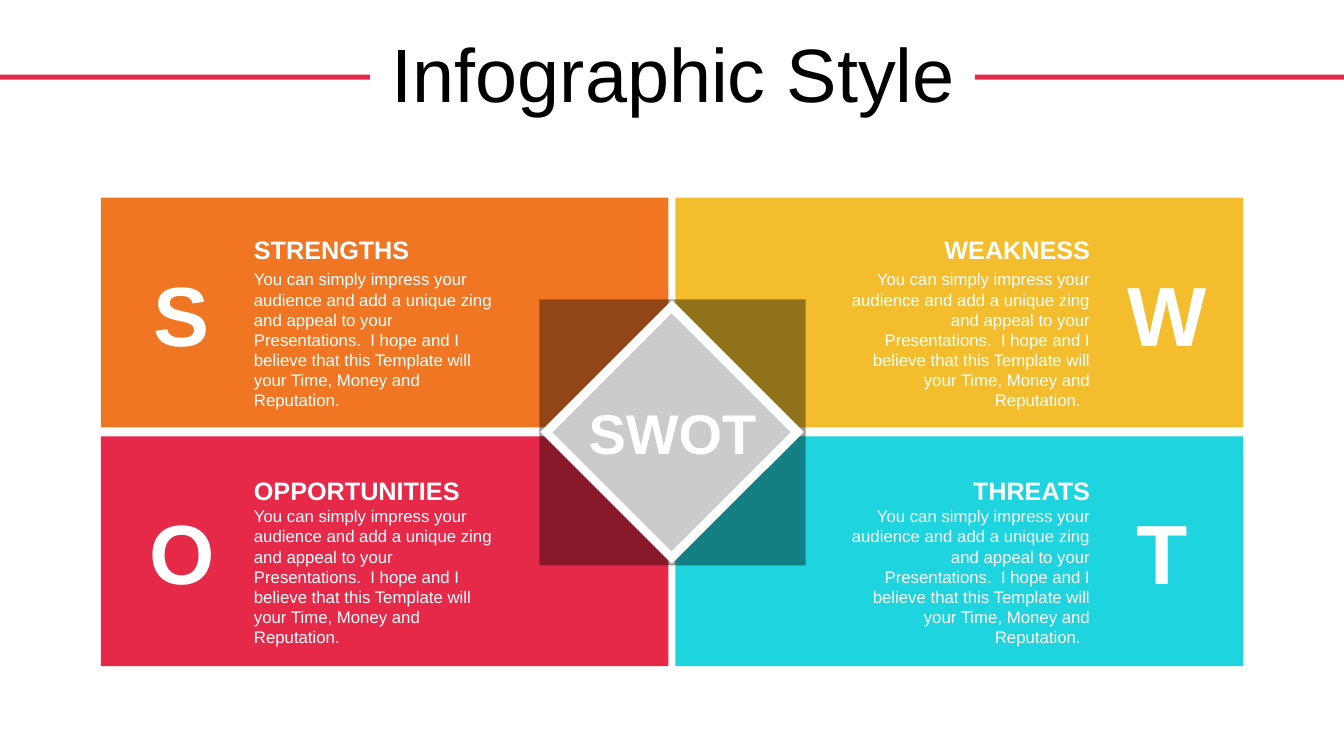
from pptx import Presentation
from pptx.dml.color import RGBColor
from pptx.enum.shapes import MSO_SHAPE
from pptx.enum.text import MSO_ANCHOR, PP_ALIGN
from pptx.oxml.ns import qn
from pptx.util import Inches, Pt
from lxml import etree

BLACK = RGBColor(0x00, 0x00, 0x00)
WHITE = RGBColor(0xFF, 0xFF, 0xFF)
GRAY = RGBColor(0xCB, 0xCB, 0xCB)
ORANGE = RGBColor(0xF0, 0x76, 0x24)
RED = RGBColor(0xE6, 0x29, 0x49)
YELLOW = RGBColor(0xF4, 0xBD, 0x2D)
CYAN = RGBColor(0x1E, 0xD4, 0xDE)

BODY = ("You can simply impress your audience and add a unique zing and appeal "
        "to your Presentations.  I hope and I believe that this Template will "
        "your Time, Money and Reputation.")

prs = Presentation()
prs.slide_width, prs.slide_height = Inches(13.33), Inches(7.5)
slide = prs.slides.add_slide(prs.slide_layouts[5])


def add_block(kind, left, top, width, height, color):
    block = slide.shapes.add_shape(
        kind, Inches(left), Inches(top), Inches(width), Inches(height))
    block.shadow.inherit = False
    block.fill.solid()
    block.fill.fore_color.rgb = color
    block.line.fill.background()
    return block


def add_label(text, left, top, width, height, size, align, bold=True):
    label = slide.shapes.add_textbox(
        Inches(left), Inches(top), Inches(width), Inches(height))
    label.text_frame.word_wrap = True
    paragraph = label.text_frame.paragraphs[0]
    paragraph.text = text
    paragraph.alignment = align
    font_format = {"name": "Arial", "size": Pt(size), "bold": bold}
    for attribute, value in font_format.items():
        setattr(paragraph.font, attribute, value)
    paragraph.font.color.rgb = WHITE


# Title between two red rules
for rule_left in (0, 9.67):
    add_block(MSO_SHAPE.RECTANGLE, rule_left, 0.74, 3.67, 0.05, RED)

title = slide.shapes.title
title.left, title.top = Inches(0.35), Inches(0.31)
title.width, title.height = Inches(12.66), Inches(0.92)
title.text_frame.text = "Infographic Style"
title.text_frame.vertical_anchor = MSO_ANCHOR.MIDDLE
heading = title.text_frame.paragraphs[0]
heading.alignment = PP_ALIGN.CENTER
heading.line_spacing = 0.9
heading.space_before = Pt(10)
heading.font.name = "Arial"
heading.font.size = Pt(54)
heading.font.color.rgb = BLACK

# Four quadrants: (column, row, letter, heading, color)
quadrants = [
    (0, 0, "S", "STRENGTHS", ORANGE),
    (0, 1, "O", "OPPORTUNITIES", RED),
    (1, 0, "W", "WEAKNESS", YELLOW),
    (1, 1, "T", "THREATS", CYAN),
]
for column, row, letter, name, color in quadrants:
    add_block(MSO_SHAPE.RECTANGLE, 1 + 5.7 * column, 1.96 + 2.37 * row,
              5.63, 2.28, color)

# Central diamond on a translucent square
shade = add_block(MSO_SHAPE.RECTANGLE, 5.35, 2.97, 2.64, 2.64, BLACK)
shade_color = shade.fill._xPr.find(qn("a:solidFill"))[0]
etree.SubElement(shade_color, qn("a:alpha"), val="40000")
frame = add_block(MSO_SHAPE.RECTANGLE, 5.74, 3.36, 1.85, 1.85, WHITE)
frame.rotation = 315
add_block(MSO_SHAPE.DIAMOND, 5.48, 3.11, 2.36, 2.36, GRAY)
add_label("SWOT", 5.64, 3.9, 2.06, 0.77, 40, PP_ALIGN.CENTER)

# Quadrant texts, mirrored on the right
for column, row, letter, name, color in quadrants:
    text_left = (2.42, 8.23)[column]
    align = (PP_ALIGN.LEFT, PP_ALIGN.RIGHT)[column]
    body = BODY + ("", "  ")[column]
    add_label(name, text_left, (2.28, 4.67)[row], 2.68, 0.3, 18, align)
    add_label(body, text_left, (2.62, 4.97)[row], 2.68, 1.31, 12, align, bold=False)
    add_label(letter, (1.36, 11.08)[column], 2.55 + 2.37 * row, 0.89, 1.11,
              60, PP_ALIGN.CENTER)

prs.save("out.pptx")
